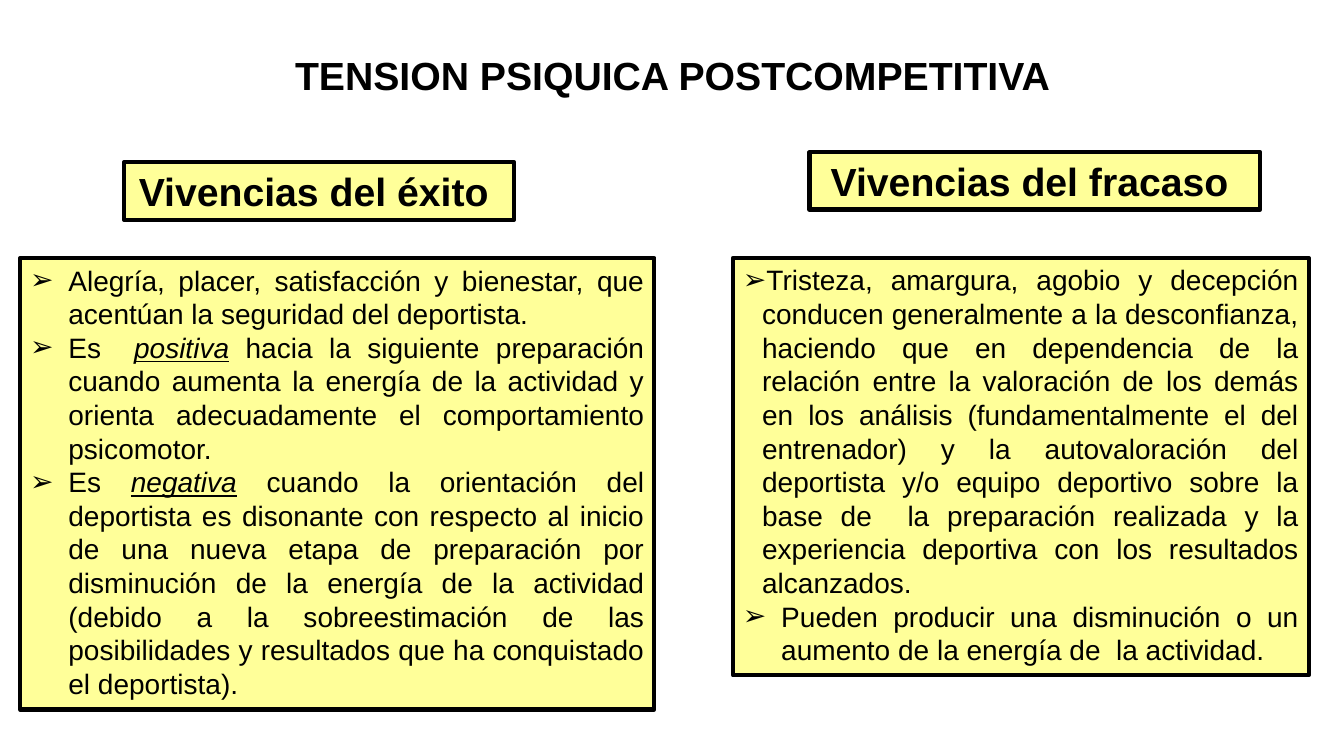
from dataclasses import dataclass
from lxml import etree
from pptx import Presentation
from pptx.dml.color import RGBColor
from pptx.enum.shapes import MSO_SHAPE
from pptx.enum.text import MSO_ANCHOR, MSO_AUTO_SIZE, PP_ALIGN
from pptx.oxml.ns import qn
from pptx.util import Pt

RECT = MSO_SHAPE.RECTANGLE
TOP = MSO_ANCHOR.TOP
NO_FIT = MSO_AUTO_SIZE.NONE
CENTER, JUSTIFY = PP_ALIGN.CENTER, PP_ALIGN.JUSTIFY
PX = 9144
SLIDE_W, SLIDE_H = 1333, 750


@dataclass(frozen=True)
class Theme:
    font: str = "Arial"
    ink: RGBColor = RGBColor(0, 0, 0)
    panel: RGBColor = RGBColor(0xFF, 0xFF, 0x99)
    heading: int = 28
    body: int = 20
    border: int = 3
    bullet: str = "➢"


THEME = Theme()
HEADING = {"size": Pt(THEME.heading), "bold": True}
BODY = {"size": Pt(THEME.body), "bold": False}
STRESS = {**BODY, "italic": True, "underline": True}

TITLE = ("TENSION PSIQUICA POSTCOMPETITIVA", (105, 46, 1124, 57))
COLUMNS = [
    {
        "heading": ("Vivencias del éxito ", (123, 161, 387, 57)),
        "box": (20, 256, 629, 448),
        "items": [
            (38, [("Alegría, placer, satisfacción y bienestar, que acentúan la "
                   "seguridad del deportista.", BODY)]),
            (38, [("Es  ", BODY), ("positiva", STRESS),
                  (" hacia la siguiente preparación cuando aumenta la energía de la "
                   "actividad y orienta adecuadamente el comportamiento psicomotor.", BODY)]),
            (38, [("Es ", BODY), ("negativa", STRESS),
                  (" cuando la orientación del deportista es disonante con respecto al "
                   "inicio de una nueva etapa de preparación por disminución de la energía "
                   "de la actividad (debido a la sobreestimación de las posibilidades y "
                   "resultados que ha conquistado el deportista).", BODY)]),
        ],
    },
    {
        "heading": ("Vivencias del fracaso ", (803, 151, 447, 57)),
        "box": (727, 256, 571, 414),
        "items": [
            (19, [("Tristeza, amargura, agobio y decepción conducen generalmente a la "
                   "desconfianza, haciendo que en dependencia de la relación entre la "
                   "valoración de los demás en los análisis (fundamentalmente el del "
                   "entrenador) y la autovaloración del deportista y/o equipo deportivo "
                   "sobre la base de  la preparación realizada y la experiencia deportiva "
                   "con los resultados alcanzados.", BODY)]),
            (38, [("Pueden producir una disminución o un aumento de la energía de  "
                   "la actividad.", BODY)]),
        ],
    },
]


def emu(box):
    return [v * PX for v in box]


def add_bullet(p, indent):
    pPr = p._p.get_or_add_pPr()
    pPr.set("marL", str(indent * PX))
    pPr.set("indent", str(-indent * PX))
    etree.SubElement(pPr, qn("a:buFont")).set("typeface", THEME.font)
    etree.SubElement(pPr, qn("a:buChar")).set("char", THEME.bullet)


def write(tf, items, align):
    for name, value in {"word_wrap": True, "auto_size": NO_FIT, "vertical_anchor": TOP}.items():
        setattr(tf, name, value)
    for i, (indent, runs) in enumerate(items):
        p = tf.add_paragraph() if i else tf.paragraphs[0]
        p.alignment = align
        if indent:
            add_bullet(p, indent)
        for text, fmt in runs:
            r = p.add_run()
            r.text = text
            for name, value in {"name": THEME.font, **fmt}.items():
                setattr(r.font, name, value)
            r.font.color.rgb = THEME.ink


def add_panel(s, box, items, align):
    sp = s.shapes.add_shape(RECT, *emu(box))
    sp.shadow.inherit = False
    sp.fill.solid()
    sp.fill.fore_color.rgb = THEME.panel
    sp.line.color.rgb = THEME.ink
    sp.line.width = Pt(THEME.border)
    write(sp.text_frame, items, align)


def main():
    """Build the slide comparing experiences of success and failure."""
    prs = Presentation()
    prs.slide_width, prs.slide_height = emu((SLIDE_W, SLIDE_H))
    s = prs.slides.add_slide(prs.slide_layouts[5])
    text, box = TITLE
    title = s.shapes.title
    title.left, title.top, title.width, title.height = emu(box)
    write(title.text_frame, [(0, [(text, HEADING)])], CENTER)
    for column in COLUMNS:
        text, box = column["heading"]
        add_panel(s, box, [(0, [(text, HEADING)])], CENTER)
        add_panel(s, column["box"], column["items"], JUSTIFY)
    prs.save("out.pptx")


if __name__ == "__main__":
    main()
